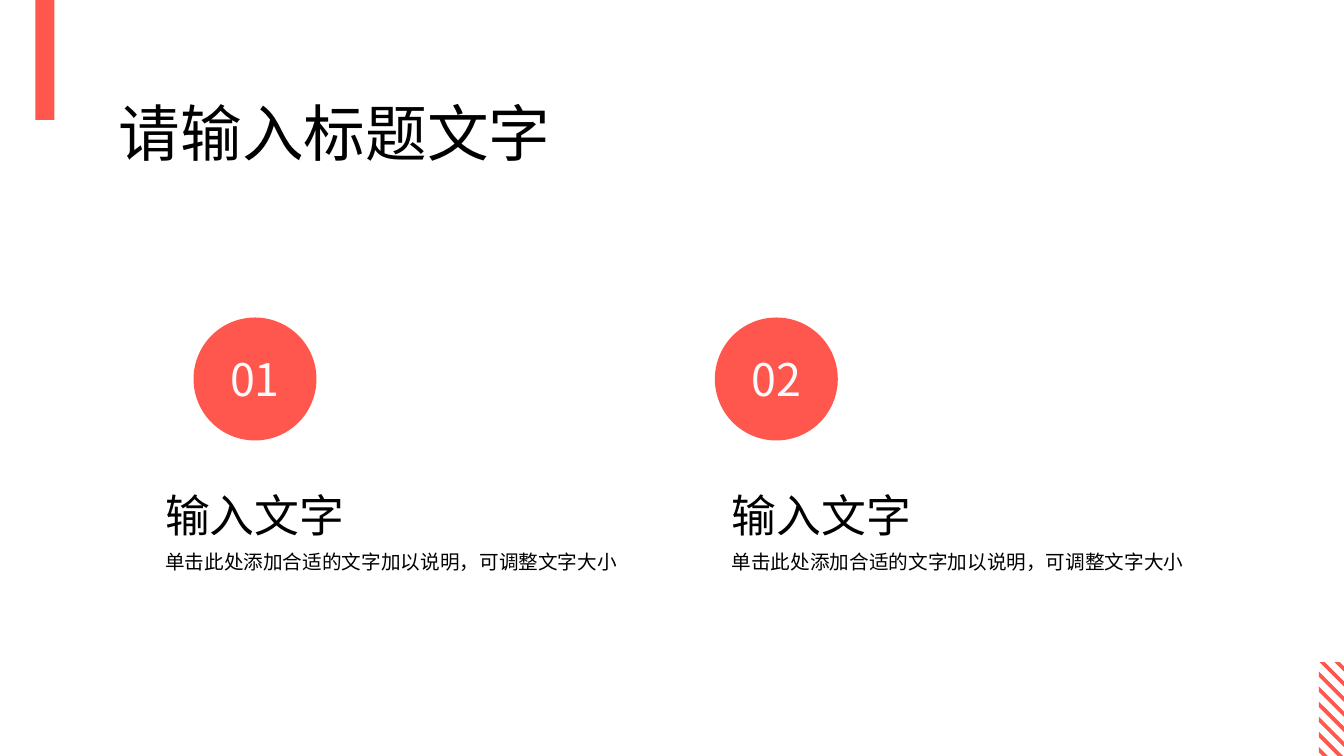
from dataclasses import dataclass

from lxml import etree
from pptx import Presentation
from pptx.dml.color import RGBColor
from pptx.enum.shapes import MSO_SHAPE
from pptx.enum.text import MSO_ANCHOR, MSO_AUTO_SIZE, PP_ALIGN
from pptx.oxml.ns import qn
from pptx.util import Inches, Pt

RECTANGLE, OVAL = MSO_SHAPE.RECTANGLE, MSO_SHAPE.OVAL
TOP, MIDDLE = MSO_ANCHOR.TOP, MSO_ANCHOR.MIDDLE
LEFT, CENTER = PP_ALIGN.LEFT, PP_ALIGN.CENTER
GROW, FIXED = MSO_AUTO_SIZE.SHAPE_TO_FIT_TEXT, MSO_AUTO_SIZE.NONE
TITLE_ONLY = 5


@dataclass(frozen=True)
class Theme:
    accent: RGBColor = RGBColor(0xFF, 0x57, 0x4E)
    ink: RGBColor = RGBColor(0, 0, 0)
    pale: RGBColor = RGBColor(0xF9, 0xFA, 0xFC)
    title_face: str = "Calibri"
    body_face: str = "Noto Sans CJK JP"
    title_size: int = 44
    heading_size: int = 32
    body_size: int = 14


class Page:
    """One slide; places are percentages of its width and height."""

    def __init__(self, deck, theme):
        self.theme = theme
        self.width, self.height = deck.slide_width, deck.slide_height
        self.slide = deck.slides.add_slide(deck.slide_layouts[TITLE_ONLY])
        self.shapes = self.slide.shapes

    def place(self, left, top, width, height):
        return [round(share * side / 100) for share, side in
                zip((left, top, width, height), (self.width, self.height) * 2)]

    def fill_text(self, box, text, size, face, color, align=LEFT, anchor=TOP, fit=GROW):
        frame = box.text_frame
        frame_format = {"word_wrap": True, "auto_size": fit, "vertical_anchor": anchor}
        for name, value in frame_format.items():
            setattr(frame, name, value)
        para = frame.paragraphs[0]
        para.alignment = align
        span = para.add_run()
        span.text = text
        for name, value in {"size": Pt(size), "name": face}.items():
            setattr(span.font, name, value)
        span.font.color.rgb = color
        latin = span.font._element.find(qn("a:latin"))
        east_asian = etree.Element(qn("a:ea"), typeface=face)
        latin.addnext(east_asian)

    def paint(self, shape):
        shape.shadow.inherit = False
        shape.fill.solid()
        shape.fill.fore_color.rgb = self.theme.accent
        shape.line.fill.background()
        return shape

    def title(self, text, *place):
        box = self.shapes.title
        for name, value in zip(("left", "top", "width", "height"), self.place(*place)):
            setattr(box, name, value)
        self.fill_text(box, text, self.theme.title_size, self.theme.title_face, self.theme.ink)

    def label(self, text, size, *place):
        box = self.shapes.add_textbox(*self.place(*place))
        self.fill_text(box, text, size, self.theme.body_face, self.theme.ink)

    def block(self, kind, *place):
        return self.paint(self.shapes.add_shape(kind, *self.place(*place)))

    def badge(self, text, *place):
        self.fill_text(self.block(OVAL, *place), text, self.theme.heading_size,
                       self.theme.body_face, self.theme.pale, CENTER, MIDDLE, FIXED)

    def hatching(self, left, top, first, pitch, thickness, count):
        """Draw diagonal stripes clipped to the bottom right corner."""
        left, _, _, _ = self.place(left, 0, 0, 0)
        top, first, pitch, thickness = (
            round(share * self.height / 100) for share in (top, first, pitch, thickness))

        def edge(start):
            """Return both ends of the 45-degree line that meets the left side at start."""
            begin = max(start, top)
            end = min(start + self.width - left, self.height)
            return [(left + y - start, y) for y in (begin, end)]

        builder = None
        for index in range(count):
            start = first + index * pitch
            corners = edge(start) + edge(start + thickness)[::-1]
            if builder is None:
                builder = self.shapes.build_freeform(*corners[0])
            else:
                builder.move_to(*corners[0])
            builder.add_line_segments(corners[1:], close=True)
        self.paint(builder.convert_to_shape())


def main():
    theme = Theme()
    deck = Presentation()
    deck.slide_width, deck.slide_height = Inches(13.33), Inches(7.5)
    page = Page(deck, theme)

    page.block(RECTANGLE, 2.63, 0, 1.43, 15.87)
    page.hatching(left=98.12, top=87.6, first=84.8, pitch=2, thickness=0.7, count=8)
    page.title("请输入标题文字", 8.1, 11.87, 35.78, 11.2)

    columns = (("01", 14.4, 11.55), ("02", 53.19, 53.71))
    for number, badge_left, text_left in columns:
        page.badge(number, badge_left, 42, 9.15, 16.27)
        page.label("单击此处添加合适的文字加以说明，可调整文字大小", theme.body_size,
                   text_left, 72.13, 35.26, 4.53)
        page.label("输入文字", theme.heading_size, text_left, 63.87, 34.51, 8.53)

    deck.save("out.pptx")


if __name__ == "__main__":
    main()
